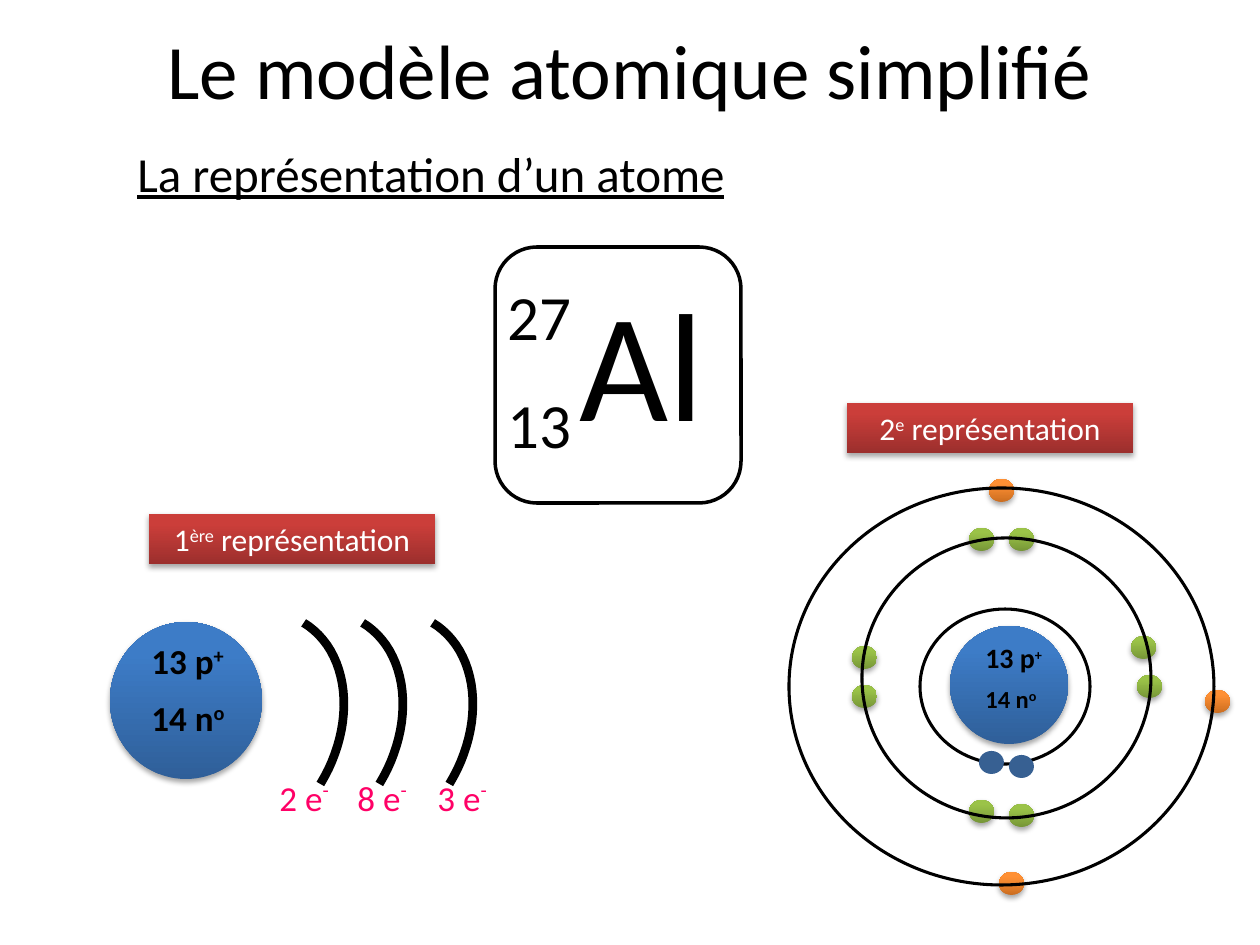
import math
from dataclasses import dataclass

import pptx
import pptx.dml.color
import pptx.enum.shapes
import pptx.enum.text
import pptx.oxml
import pptx.oxml.ns
import pptx.util
from lxml import etree

SHAPE = pptx.enum.shapes.MSO_SHAPE
ALIGN = pptx.enum.text.PP_ALIGN
ANCHOR = pptx.enum.text.MSO_ANCHOR


@dataclass(frozen=True)
class Theme:
    font: str = "Calibri"
    black: str = "000000"
    white: str = "FFFFFF"
    pink: str = "FF0066"
    inner_electron: str = "376092"
    # Gradients run from the bottom colour to the top colour.
    blue: tuple = ("2F5F99", "3D7CC7")
    green: tuple = ("779737", "9BC348")
    orange: tuple = ("CC6E20", "FF9034")
    red: tuple = ("9C2F2D", "CB3E3A")
    title: int = 44
    subtitle: int = 28
    symbol: int = 88
    number: int = 36
    label: int = 18
    particle: int = 20
    small_proton: int = 16
    small_neutron: int = 14


THEME = Theme()


def px(length):
    return pptx.util.Emu(round(length * 914400 / 126))


def rgb(color):
    return pptx.dml.color.RGBColor.from_string(color)


def add_shadow(shape):
    properties = shape.element.spPr
    effects = properties.find(pptx.oxml.ns.qn("a:effectLst"))
    shadow = etree.SubElement(effects, pptx.oxml.ns.qn("a:outerShdw"), blurRad="39370",
                              dist="22860", dir="5400000", rotWithShape="0")
    color = etree.SubElement(shadow, pptx.oxml.ns.qn("a:srgbClr"), val=THEME.black)
    etree.SubElement(color, pptx.oxml.ns.qn("a:alpha"), val="35000")


def add_figure(shapes, kind, left, top, width, height, fill=None, line_width=None):
    """Draw a preset shape; a pair of colours as fill gives a shaded, shadowed shape."""
    shape = shapes.add_shape(kind, px(left), px(top), px(width), px(height))
    shape.shadow.inherit = False
    if fill is None:
        shape.fill.background()
    elif isinstance(fill, tuple):
        shape.fill.gradient()
        shape.fill.gradient_angle = 90
        for stop, color, position in zip(shape.fill.gradient_stops, fill, (0, 0.8)):
            stop.color.rgb = rgb(color)
            stop.position = position
        add_shadow(shape)
    else:
        shape.fill.solid()
        shape.fill.fore_color.rgb = rgb(fill)
    if line_width is None:
        shape.line.fill.background()
    else:
        shape.line.color.rgb = rgb(THEME.black)
        shape.line.width = pptx.util.Pt(line_width)
    return shape


def add_text_box(shapes, left, top, width, height):
    return shapes.add_textbox(px(left), px(top), px(width), px(height))


def write_text(shape, text, size, raised="", tail="", raised_size=None, raise_by=30,
               color=THEME.black, bold=False, underline=False, align=ALIGN.LEFT,
               anchor=ANCHOR.TOP, space_before=None):
    """Add a paragraph made of text, a raised part and a tail."""
    frame = shape.text_frame
    frame.word_wrap = True
    frame.vertical_anchor = anchor
    paragraph = frame.add_paragraph() if frame.text else frame.paragraphs[0]
    paragraph.alignment = align
    if space_before:
        paragraph.space_before = pptx.util.Pt(space_before)
    parts = ((text, size, 0), (raised, raised_size or size, raise_by), (tail, size, 0))
    for content, part_size, baseline in parts:
        if not content:
            continue
        run = paragraph.add_run()
        run.text = content
        run.font.name = THEME.font
        run.font.size = pptx.util.Pt(part_size)
        run.font.bold = bold
        run.font.underline = underline
        run.font.color.rgb = rgb(color)
        if baseline:
            run.font._element.set("baseline", str(baseline * 1000))


def add_headings(shapes, left, top):
    title = add_text_box(shapes, left, top, 1134, 96)
    write_text(title, "Le modèle atomique simplifié", THEME.title,
               align=ALIGN.CENTER, anchor=ANCHOR.MIDDLE)
    subtitle = add_text_box(shapes, left + 62, top + 116, 998, 157)
    write_text(subtitle, "La représentation d’un atome", THEME.subtitle, underline=True)


def add_element_symbol(shapes, left, top):
    symbol = add_text_box(shapes, left + 72, top + 14, 175, 199)
    write_text(symbol, "Al", THEME.symbol)
    numbers = add_text_box(shapes, left, top + 24, 116, 199)
    write_text(numbers, "27", THEME.number)
    write_text(numbers, "13", THEME.number, space_before=19)
    frame = add_figure(shapes, SHAPE.ROUNDED_RECTANGLE, left, top, 246, 256, line_width=2)
    frame.adjustments[0] = 0.17


def add_representation_label(shapes, left, top, number, ordinal):
    label = add_figure(shapes, SHAPE.RECTANGLE, left, top, 286, 50, THEME.red)
    write_text(label, number, THEME.label, raised=ordinal, tail=" représentation",
               color=THEME.white, align=ALIGN.CENTER, anchor=ANCHOR.MIDDLE)


def add_shell_arc(shapes, left, top, width=98, height=129, steps=24):
    """Draw a quarter of an ellipse, turned to stand upright."""
    angles = [math.pi / 2 * step / steps for step in range(steps + 1)]
    points = [(px(left + width * math.sin(angle)),
               px(top + height * (1 - math.cos(angle)))) for angle in angles]
    builder = shapes.build_freeform(*points[0])
    builder.add_line_segments(points[1:], close=False)
    arc = builder.convert_to_shape()
    arc.rotation = 31.3
    arc.shadow.inherit = False
    arc.fill.background()
    arc.line.color.rgb = rgb(THEME.black)
    arc.line.width = pptx.util.Pt(5)


def add_shell_diagram(shapes, left, top):
    add_figure(shapes, SHAPE.OVAL, left, top, 152, 157, THEME.blue)
    for text, raised, offset in (("13 p", "+", 11), ("14 n", "o", 68)):
        particles = add_text_box(shapes, left + 29, top + offset, 108, 55)
        write_text(particles, text, THEME.particle, raised=raised, bold=True)
    for text, offset, width in (("2 e", 157, 83), ("8 e", 235, 88), ("3 e", 315, 93)):
        label = add_figure(shapes, SHAPE.RECTANGLE, left + offset, top + 148, width, 55,
                           THEME.white)
        write_text(label, text, THEME.particle, raised="-", raise_by=40, color=THEME.pink)
    for offset in (282, 212, 153):
        add_shell_arc(shapes, left + offset, top + 17)


def add_orbit_diagram(shapes, left, top):
    def add_electrons(positions, fill):
        for x, y in positions:
            add_figure(shapes, SHAPE.OVAL, left + x, top + y, 25, 23, fill)

    add_electrons(((63, 167), (180, 321), (180, 49), (220, 49),
                   (63, 206), (348, 196), (342, 157), (220, 325)), THEME.green)
    add_electrons(((210, 393), (416, 211), (200, 0)), THEME.orange)
    for x, y, width, height in ((131, 130, 170, 155), (73, 59, 289, 280), (0, 9, 425, 397)):
        add_figure(shapes, SHAPE.OVAL, left + x, top + y, width, height, line_width=1.75)
    add_figure(shapes, SHAPE.OVAL, left + 161, top + 147, 118, 118, THEME.blue)
    for text, raised, size, offset in (("13 p", "+", THEME.small_proton, 155),
                                       ("14 n", "o", THEME.small_neutron, 199)):
        particles = add_text_box(shapes, left + 184, top + offset, 88, 45)
        write_text(particles, text, size, raised=raised,
                   raised_size=THEME.small_neutron, bold=True)
    add_electrons(((190, 272), (220, 276)), THEME.inner_electron)


def main():
    presentation = pptx.Presentation()
    presentation.slide_width = px(1260)
    presentation.slide_height = px(945)
    slide = presentation.slides.add_slide(presentation.slide_layouts[6])
    shapes = slide.shapes
    add_headings(shapes, 63, 21)
    add_element_symbol(shapes.add_group_shape().shapes, 495, 247)
    add_shell_diagram(shapes, 110, 622)
    add_orbit_diagram(shapes.add_group_shape().shapes, 789, 479)
    add_representation_label(shapes, 149, 514, "1", "ère")
    add_representation_label(shapes, 847, 403, "2", "e")
    presentation.save("out.pptx")


if __name__ == "__main__":
    main()
